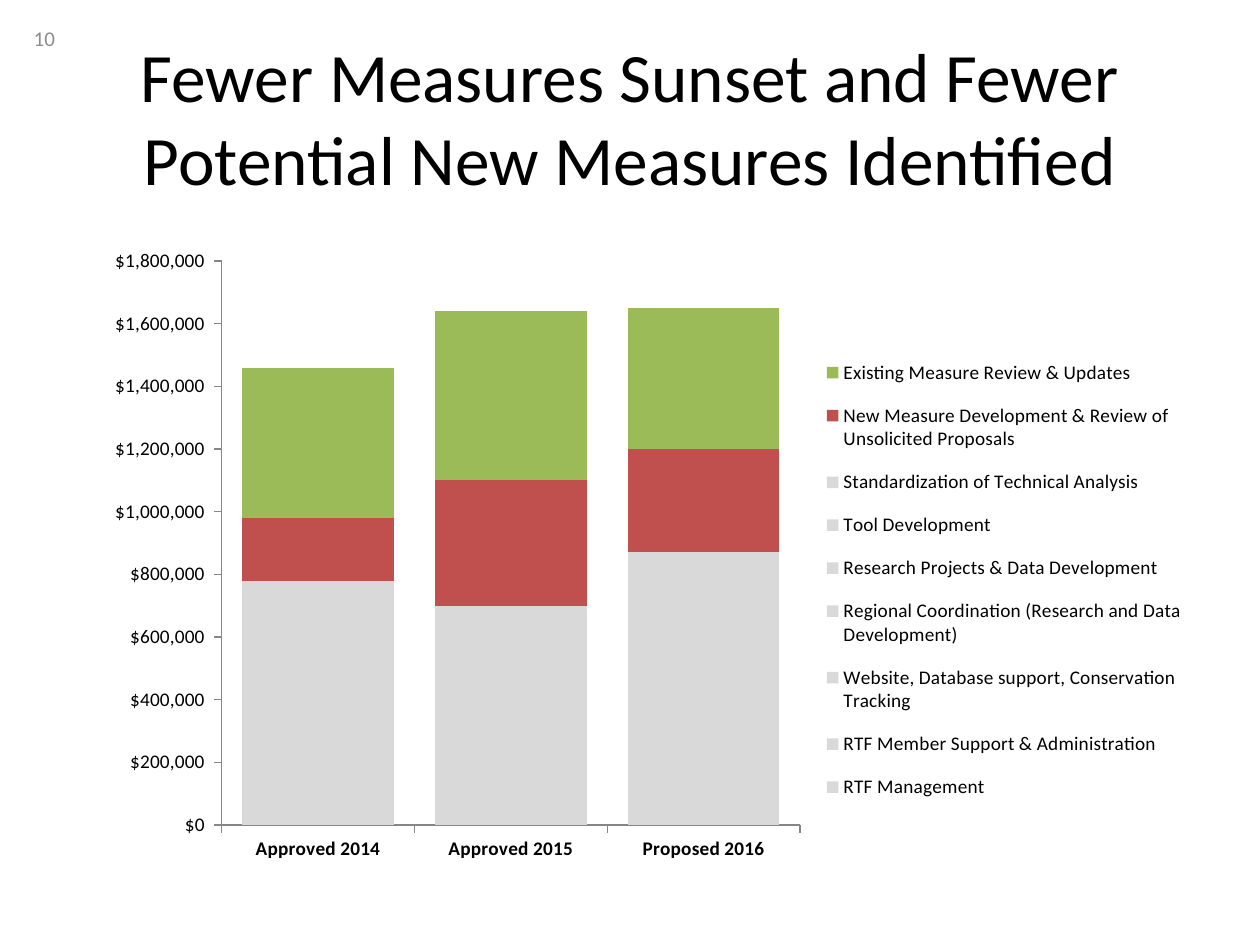
from dataclasses import dataclass

from lxml import etree
from pptx import Presentation
from pptx import util as u
from pptx.chart.data import CategoryChartData
from pptx.dml.color import RGBColor
from pptx.enum import chart as charts, text
from pptx.oxml.ns import qn


@dataclass(frozen=True)
class Theme:
    font: str = "Calibri"
    ink: str = "000000"
    muted: str = "8C8C8C"
    axis: str = "868686"
    grey: str = "D9D9D9"
    red: str = "C0504D"
    green: str = "9BBB59"
    title_size: float = 39.6
    number_size: float = 12
    chart_size: float = 10
    label_size: float = 11


class SlideBuilder:
    def __init__(self, deck, theme):
        self.theme = theme
        self.slide = deck.slides.add_slide(deck.slide_layouts[5])

    def set_font(self, font, size, color, bold=None):
        font.name, font.size, font.bold = self.theme.font, u.Pt(size), bold
        font.color.rgb = RGBColor.from_string(color)

    def fill_text(self, box, words, size, color, align):
        frame = box.text_frame
        frame.word_wrap = True
        frame.auto_size = text.MSO_AUTO_SIZE.NONE
        frame.vertical_anchor = text.MSO_ANCHOR.MIDDLE
        para = frame.paragraphs[0]
        para.text, para.alignment = words, align
        self.set_font(para.font, size, color)

    def title(self, words, left, top, width, height):
        box = self.slide.shapes.title
        box.left, box.top = u.Cm(left), u.Cm(top)
        box.width, box.height = u.Cm(width), u.Cm(height)
        self.fill_text(box, words, self.theme.title_size, self.theme.ink,
                       text.PP_ALIGN.CENTER)

    def page_number(self, words, *place):
        box = self.slide.shapes.add_textbox(*map(u.Cm, place))
        self.fill_text(box, words, self.theme.number_size, self.theme.muted,
                       text.PP_ALIGN.LEFT)

    @staticmethod
    def place_part(parent, index, target=None, **fractions):
        """Give a chart part a fixed place, as fractions of the chart."""
        for old in parent.findall(qn("c:layout")):
            parent.remove(old)
        layout = etree.Element(qn("c:layout"))
        manual = etree.SubElement(layout, qn("c:manualLayout"))
        settings = {"layoutTarget": target} if target else {}
        settings.update(xMode="edge", yMode="edge", **fractions)
        for name, value in settings.items():
            etree.SubElement(manual, qn(f"c:{name}")).set("val", str(value))
        parent.insert(index, layout)

    def style_axis(self, axis, bold=False):
        axis.has_major_gridlines = False
        axis.major_tick_mark = charts.XL_TICK_MARK.OUTSIDE
        axis.minor_tick_mark = charts.XL_TICK_MARK.NONE
        axis.format.line.color.rgb = RGBColor.from_string(self.theme.axis)
        self.set_font(axis.tick_labels.font, self.theme.label_size,
                      self.theme.ink, bold)

    def stacked_columns(self, categories, rows, *place):
        data = CategoryChartData()
        data.categories = categories
        for name, values, _ in rows:
            data.add_series(name, values)
        chart = self.slide.shapes.add_chart(
            charts.XL_CHART_TYPE.COLUMN_STACKED, *map(u.Cm, place), data).chart
        chart.has_title = False
        self.set_font(chart.font, self.theme.chart_size, self.theme.ink)

        # Columns
        plot = chart.plots[0]
        plot.gap_width, plot.overlap = 27, 100
        plot.vary_by_categories = False
        for series, (_, _, color) in zip(plot.series, rows):
            series.format.fill.solid()
            series.format.fill.fore_color.rgb = RGBColor.from_string(color)

        # Axes
        self.style_axis(chart.category_axis, bold=True)
        values_axis = chart.value_axis
        self.style_axis(values_axis)
        values_axis.minimum_scale, values_axis.maximum_scale = 0, 1_800_000
        values_axis.major_unit = 200_000
        values_axis.tick_labels.number_format = r'"$"#,##0_);\("$"#,##0\)'
        values_axis.tick_labels.number_format_is_linked = False

        # Legend and plot area
        chart.has_legend = True
        legend = chart.legend
        legend.position = charts.XL_LEGEND_POSITION.RIGHT
        legend.include_in_layout = False
        self.set_font(legend.font, self.theme.label_size, self.theme.ink)
        root = chart.element
        self.place_part(root.find(".//" + qn("c:legend")), 1,
                        x=0.67, y=0.18, w=0.32, h=0.71)
        self.place_part(root.find(".//" + qn("c:plotArea")), 0, "inner",
                        x=0.14, y=0.06, w=0.51, h=0.84)


def main():
    deck = Presentation()
    deck.slide_width, deck.slide_height = u.Cm(25.4), u.Cm(19.05)
    theme = Theme()
    page = SlideBuilder(deck, theme)

    page.title("Fewer Measures Sunset and Fewer Potential New Measures Identified",
               1.27, 0.76, 22.86, 3.18)
    page.page_number("10", 0.43, 0.25, 5.92, 1.02)

    # Budget in thousands of dollars, from the bottom of the stack up
    budget = [
        ("RTF Management", (200, 130, 140), theme.grey),
        ("RTF Member Support & Administration", (140, 150, 230), theme.grey),
        ("Website, Database support, Conservation Tracking", (60, 40, 80), theme.grey),
        ("Regional Coordination (Research and Data Development)",
         (20, 140, 150), theme.grey),
        ("Research Projects & Data Development", (120, 40, 0), theme.grey),
        ("Tool Development", (180, 90, 70), theme.grey),
        ("Standardization of Technical Analysis", (60, 110, 200), theme.grey),
        ("New Measure Development & Review of Unsolicited Proposals",
         (200, 400, 330), theme.red),
        ("Existing Measure Review & Updates", (480, 540, 450), theme.green),
    ]
    rows = [(name, [value * 1000 for value in values], color)
            for name, values, color in budget]
    page.stacked_columns(["Approved 2014", "Approved 2015", "Proposed 2016"],
                         rows, 1.27, 4.45, 22.86, 13.54)

    deck.save("out.pptx")


if __name__ == "__main__":
    main()
